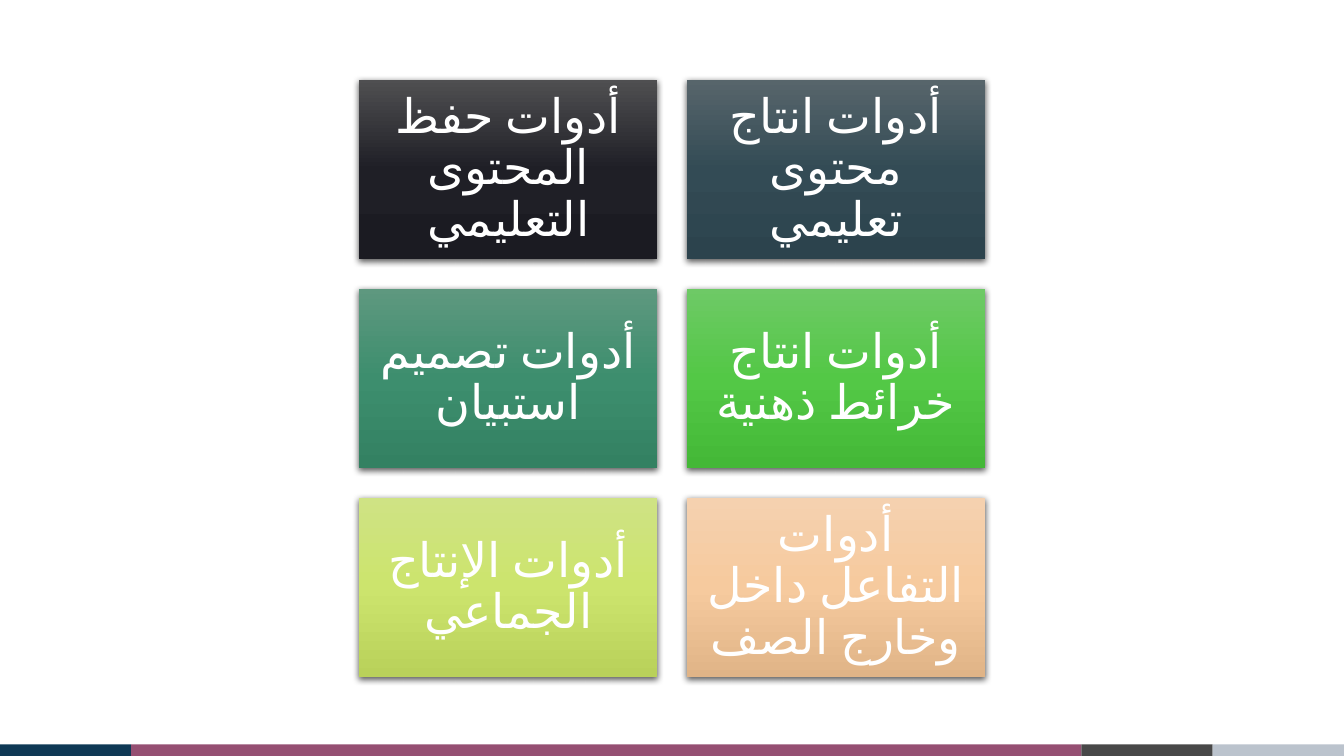
from copy import deepcopy
from typing import NamedTuple

from lxml.etree import SubElement
from pptx import Presentation
from pptx.dml.color import RGBColor
from pptx.enum.lang import MSO_LANGUAGE_ID
from pptx.enum.shapes import MSO_SHAPE
from pptx.enum.text import MSO_ANCHOR, PP_ALIGN
from pptx.oxml.ns import qn
from pptx.shapes.autoshape import Shape
from pptx.slide import Slide
from pptx.util import Emu, Pt

WIDTH, HEIGHT = 1280, 720
LEFT, TOP = 342, 76
TILE_W, TILE_H = 284, 171
STEP_X, STEP_Y = 312, 199
COLUMNS = 2
PADDING = 13
BAR_TOP = 709


class Bar(NamedTuple):
    width: int
    color: str


class Tile(NamedTuple):
    text: str
    colors: tuple[str, str, str]


BARS = [
    Bar(125, "0F3955"),
    Bar(905, "954F72"),
    Bar(125, "484848"),
    Bar(125, "BBC3CD"),
]
TILES = [
    Tile("أدوات حفظ المحتوى التعليمي", ("4F4F51", "1F1F26", "1B1B22")),
    Tile("أدوات انتاج محتوى تعليمي", ("57656B", "334B55", "2C434D")),
    Tile("أدوات تصميم استبيان", ("5E987F", "3D8E6E", "338162")),
    Tile("أدوات انتاج خرائط ذهنية", ("6EC966", "53C846", "44B837")),
    Tile("أدوات الإنتاج الجماعي", ("CFE384", "CCE46D", "B9D15A")),
    Tile("أدوات التفاعل داخل وخارج الصف", ("F5D1AF", "F6CA9E", "E0B487")),
]


def px(count: int) -> Emu:
    return Emu(count * 9525)


def rgb(color: str) -> RGBColor:
    return RGBColor.from_string(color)


def add_box(slide: Slide, x: int, y: int, width: int, height: int) -> Shape:
    """Add a rectangle with neither outline nor shadow."""
    box = slide.shapes.add_shape(
        MSO_SHAPE.RECTANGLE, px(x), px(y), px(width), px(height)
    )
    box.line.fill.background()
    box.shadow.inherit = False
    return box


def shade(box: Shape, colors: tuple[str, str, str]) -> None:
    """Fill from top to bottom with three evenly spaced colours."""
    fill = box.fill
    fill.gradient()
    fill.gradient_angle = 270
    stops = box._element.spPr.find(qn("a:gradFill")).find(qn("a:gsLst"))
    stops.insert(1, deepcopy(stops[0]))
    for index, (stop, color) in enumerate(zip(fill.gradient_stops, colors)):
        stop.position = index / 2
        stop.color.rgb = rgb(color)


def add_shadow(box: Shape) -> None:
    effects = box._element.spPr.find(qn("a:effectLst"))
    shadow = SubElement(
        effects,
        qn("a:outerShdw"),
        blurRad=str(Pt(4.5)),
        dist=str(Pt(1.5)),
        dir="5400000",
        algn="ctr",
        rotWithShape="0",
    )
    black = SubElement(shadow, qn("a:srgbClr"), val="000000")
    SubElement(black, qn("a:alpha"), val="63000")


def write(box: Shape, text: str) -> None:
    """Put centred right-to-left text in the box."""
    frame = box.text_frame
    frame.word_wrap = True
    frame.vertical_anchor = MSO_ANCHOR.MIDDLE
    frame.margin_left = frame.margin_right = px(PADDING)
    frame.margin_top = frame.margin_bottom = px(PADDING)
    para = frame.paragraphs[0]
    para.text = text
    para.alignment = PP_ALIGN.CENTER
    para.line_spacing = 0.9
    para._p.get_or_add_pPr().set("rtl", "1")
    font = para.font
    font.size = Pt(34)
    font.color.rgb = rgb("FFFFFF")
    font.name = "Calibri"
    para.runs[0].font.language_id = MSO_LANGUAGE_ID.ARABIC


def add_bars(slide: Slide) -> None:
    x = 0
    for bar in BARS:
        box = add_box(slide, x, BAR_TOP, bar.width, HEIGHT - BAR_TOP)
        box.fill.solid()
        box.fill.fore_color.rgb = rgb(bar.color)
        x += bar.width


def add_tiles(slide: Slide) -> None:
    for index, tile in enumerate(TILES):
        row, column = divmod(index, COLUMNS)
        x, y = LEFT + column * STEP_X, TOP + row * STEP_Y
        box = add_box(slide, x, y, TILE_W, TILE_H)
        shade(box, tile.colors)
        add_shadow(box)
        write(box, tile.text)


def main() -> None:
    deck = Presentation()
    deck.slide_width, deck.slide_height = px(WIDTH), px(HEIGHT)
    slide = deck.slides.add_slide(deck.slide_layouts[6])
    add_bars(slide)
    add_tiles(slide)
    deck.save("out.pptx")


if __name__ == "__main__":
    main()
